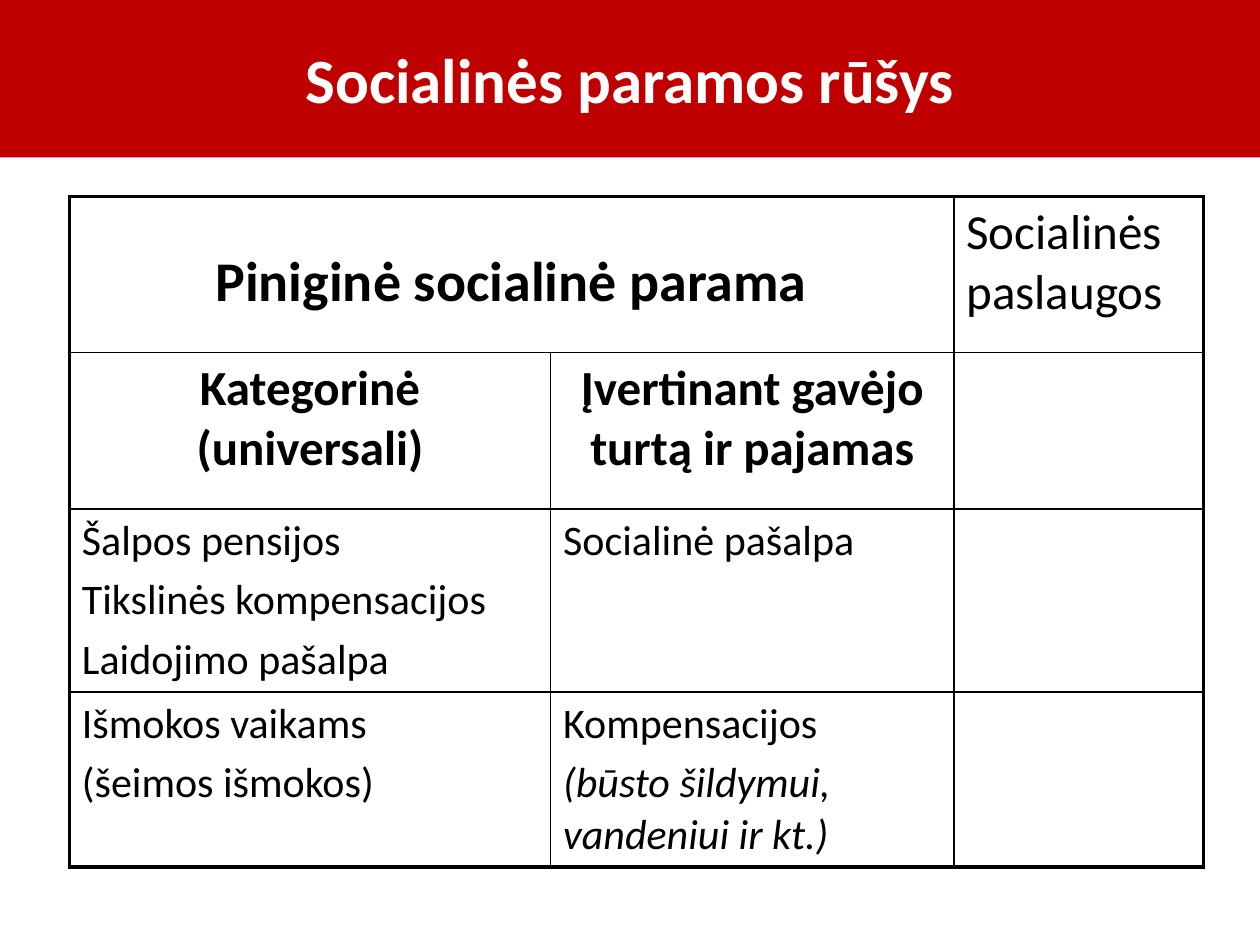
from dataclasses import dataclass
from typing import Any

from lxml import etree
from pptx import Presentation
from pptx import util as u
from pptx.dml import color
from pptx.enum import text
from pptx.oxml import ns


@dataclass(frozen=True)
class Theme:
    font: str = "Calibri"
    red: str = "C00000"
    white: str = "FFFFFF"
    black: str = "000000"
    title: int = 36
    lead: int = 32
    head: int = 28
    body: int = 24
    gap: float = 0.2
    thin: float = 1
    thick: float = 2.25


@dataclass(frozen=True)
class Line:
    words: str
    size: int
    bold: bool = False
    mid: bool = False
    slant: bool = False


@dataclass(frozen=True)
class Entry:
    row: int
    col: int
    lines: tuple[Line, ...]
    top: float = 0.05


T = Theme()
WIDE, HIGH = 10, 7.5
BAND = HIGH / 6
LEFT, TOP = 0.55, 1.56
COLS = (3.82, 3.2, 1.98)
ROWS = (1.24, 1.24, 1.45, 1.38)


def head(words: str) -> tuple[Line, ...]:
    return (Line(words, T.head, bold=True, mid=True),)


def plain(*items: str) -> tuple[Line, ...]:
    return tuple(Line(item, T.body) for item in items)


ENTRIES = (
    Entry(0, 0, (Line("Piniginė socialinė parama", T.lead, True, True),), top=0.41),
    Entry(0, 2, (Line("Socialinės paslaugos", T.head),)),
    Entry(1, 0, head("Kategorinė (universali)")),
    Entry(1, 1, head("Įvertinant gavėjo turtą ir pajamas")),
    Entry(2, 0, plain("Šalpos pensijos", "Tikslinės kompensacijos", "Laidojimo pašalpa")),
    Entry(2, 1, plain("Socialinė pašalpa")),
    Entry(3, 0, plain("Išmokos vaikams", "(šeimos išmokos)")),
    Entry(3, 1, plain("Kompensacijos")
          + (Line("(būsto šildymui, vandeniui ir kt.)", T.body, slant=True),)),
)


def apply(item: Any, **values: Any) -> None:
    for name, value in values.items():
        setattr(item, name, value)


def write(frame: Any, lines: tuple[Line, ...], tint: str) -> None:
    for i, line in enumerate(lines):
        para = frame.add_paragraph() if i else frame.paragraphs[0]
        side = text.PP_ALIGN.CENTER if line.mid else text.PP_ALIGN.LEFT
        apply(para, alignment=side, space_before=u.Pt(T.gap * line.size))
        run = para.add_run()
        run.text = line.words
        apply(run.font, name=T.font, size=u.Pt(line.size),
              bold=line.bold, italic=line.slant)
        run.font.color.rgb = color.RGBColor.from_string(tint)


def edge(cell: Any, row: int, col: int) -> None:
    """Draw thick lines on the rim of the table and thin ones inside."""
    rim = {"L": col == 0, "R": col == len(COLS) - 1,
           "T": row == 0, "B": row == len(ROWS) - 1}
    props = cell._tc.get_or_add_tcPr()
    for i, (side, outer) in enumerate(rim.items()):
        line = etree.Element(ns.qn(f"a:ln{side}"))
        line.set("w", str(u.Pt(T.thick if outer else T.thin)))
        fill = etree.SubElement(line, ns.qn("a:solidFill"))
        etree.SubElement(fill, ns.qn("a:srgbClr")).set("val", T.black)
        props.insert(i, line)


def add_title(slide: Any) -> None:
    title = slide.shapes.title
    apply(title, left=0, top=0, width=u.Inches(WIDE), height=u.Inches(BAND))
    title.fill.solid()
    title.fill.fore_color.rgb = color.RGBColor.from_string(T.red)
    title.text_frame.vertical_anchor = text.MSO_ANCHOR.MIDDLE
    write(title.text_frame,
          (Line("Socialinės paramos rūšys", T.title, True, True),), T.white)


def add_grid(slide: Any) -> None:
    box = [u.Inches(n) for n in (LEFT, TOP, sum(COLS), sum(ROWS))]
    table = slide.shapes.add_table(len(ROWS), len(COLS), *box).table
    apply(table, first_row=False, horz_banding=False)
    for col, width in zip(table.columns, COLS):
        col.width = u.Inches(width)
    for row, height in zip(table.rows, ROWS):
        row.height = u.Inches(height)
    for row in range(len(ROWS)):
        for col in range(len(COLS)):
            cell = table.cell(row, col)
            cell.fill.background()
            edge(cell, row, col)
    table.cell(0, 0).merge(table.cell(0, 1))
    for entry in ENTRIES:
        cell = table.cell(entry.row, entry.col)
        cell.margin_top = u.Inches(entry.top)
        write(cell.text_frame, entry.lines, T.black)


def main() -> None:
    deck = Presentation()
    apply(deck, slide_width=u.Inches(WIDE), slide_height=u.Inches(HIGH))
    slide = deck.slides.add_slide(deck.slide_layouts.get_by_name("Title Only"))
    add_title(slide)
    add_grid(slide)
    deck.save("out.pptx")


if __name__ == "__main__":
    main()
